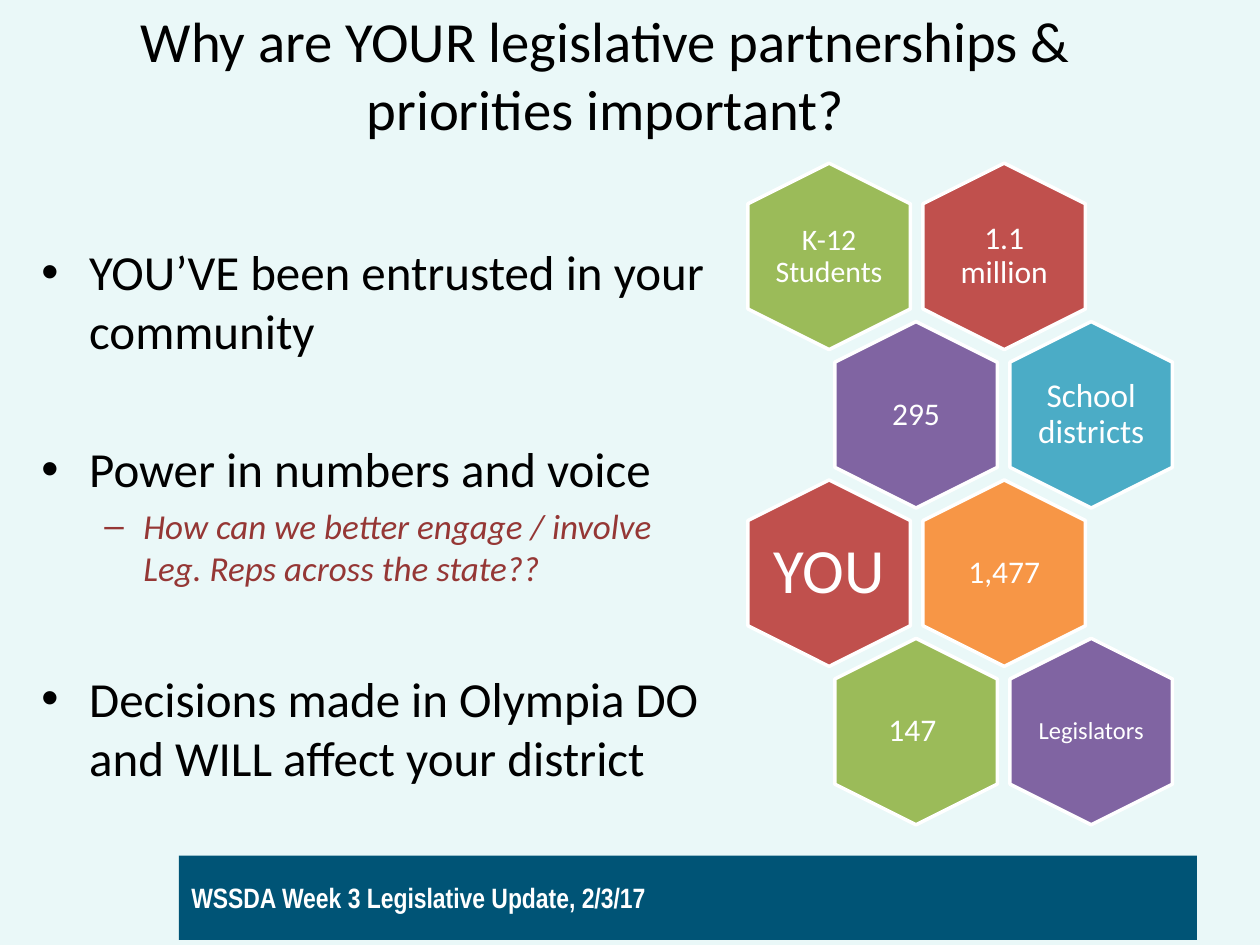
import pptx
import pptx.util
import pptx.dml.color
import pptx.enum.shapes
import pptx.enum.text
import lxml.etree
import pptx.oxml.ns

Inches = pptx.util.Inches
Pt = pptx.util.Pt
ALIGN = pptx.enum.text.PP_ALIGN
SHAPES = pptx.enum.shapes.MSO_SHAPE

COLORS = {
    "background": "EAF8F8", "footer": "005476", "black": "000000",
    "white": "FFFFFF", "dark red": "953735", "red": "C0504D",
    "green": "9BBB59", "purple": "8064A2", "blue": "4BACC6",
    "orange": "F79646",
}

# Honeycomb: rows of two cells, every second row shifted right
HEXAGON_LONG, HEXAGON_SHORT = 1.48, 1.29
GRID_LEFT, GRID_TOP = 5.84, 1.39
COLUMN_STEP, ROW_STEP, ROW_SHIFT = 1.39, 1.257, 0.69
LABEL_WIDTH, LABEL_HEIGHT = 0.89, 1.02
HONEYCOMB = [  # text, fill, size, inset
    [("K-12 Students", "green", 17, 0), ("1.1 million", "red", 18, 0.07)],
    [("295", "purple", 18, 0.07), ("School districts", "blue", 19, 0)],
    [("YOU", "red", 36, 0), ("1,477", "orange", 18, 0.07)],
    [("147 ", "green", 18, 0.07), ("Legislators", "purple", 14, 0)],
]

BULLETS = [  # text, level, space before in points
    ("YOU’VE been entrusted in your community", 0, 5.6),
    ("Power in numbers and voice", 0, 45.4),
    ("How can we better engage / involve Leg. Reps across the state??", 1, 4),
    ("Decisions made in Olympia DO and WILL affect your district", 0, 45.4),
]
LEVELS = [  # margin, indent, bullet, size, color, italic
    (0.38, -0.38, "•", 28, "black", False),
    (0.81, -0.31, "–", 20, "dark red", True),
]


def rgb(name):
    return pptx.dml.color.RGBColor.from_string(COLORS[name])


def format_paragraph(paragraph, size, color, font="Calibri", bold=False,
                     italic=False, align=ALIGN.LEFT):
    paragraph.alignment = align
    for run in paragraph.runs:
        run.font.name = font
        run.font.size = Pt(size)
        run.font.bold = bold
        run.font.italic = italic
        run.font.color.rgb = rgb(color)


def add_text_box(slide, left, top, width, height, middle=True):
    box = slide.shapes.add_textbox(Inches(left), Inches(top),
                                   Inches(width), Inches(height))
    box.text_frame.word_wrap = True
    if middle:
        box.text_frame.vertical_anchor = pptx.enum.text.MSO_ANCHOR.MIDDLE
    return box.text_frame


def add_filled_shape(slide, kind, left, top, width, height, color):
    shape = slide.shapes.add_shape(kind, Inches(left), Inches(top),
                                   Inches(width), Inches(height))
    shape.shadow.inherit = False
    shape.fill.solid()
    shape.fill.fore_color.rgb = rgb(color)
    shape.line.fill.background()
    return shape


def add_title(slide):
    frame = add_text_box(slide, 0.25, 0.25, 9.11, 0.67)
    frame.text = "Why are YOUR legislative partnerships & priorities important?"
    format_paragraph(frame.paragraphs[0], 32.4, "black", align=ALIGN.CENTER)


def add_footer(slide):
    bar = add_filled_shape(slide, SHAPES.RECTANGLE, 1.42, 6.79, 8.08, 0.67,
                           "footer")
    frame = bar.text_frame
    frame.text = "WSSDA Week 3 Legislative Update, 2/3/17"
    frame.vertical_anchor = pptx.enum.text.MSO_ANCHOR.MIDDLE
    format_paragraph(frame.paragraphs[0], 16, "white", "Arial Narrow", bold=True)


def add_bullets(slide):
    frame = add_text_box(slide, 0.23, 1.87, 5.51, 4.91, middle=False)
    frame.text = "\n".join(text for text, _, _ in BULLETS)
    for paragraph, (_, level, space) in zip(frame.paragraphs, BULLETS):
        margin, indent, bullet, size, color, italic = LEVELS[level]
        paragraph.level = level
        paragraph.space_before = Pt(space)
        format_paragraph(paragraph, size, color, italic=italic)
        properties = paragraph._p.get_or_add_pPr()
        properties.set("marL", str(Inches(margin)))
        properties.set("indent", str(Inches(indent)))
        for tag, key, value in (("a:buFont", "typeface", "Arial"),
                                ("a:buChar", "char", bullet)):
            lxml.etree.SubElement(properties,
                                  pptx.oxml.ns.qn(tag)).set(key, value)


def add_hexagon(slide, left, top, text, color, size, inset):
    hexagon = add_filled_shape(slide, SHAPES.HEXAGON, left, top,
                               HEXAGON_LONG, HEXAGON_SHORT, color)
    hexagon.rotation = 90
    hexagon.adjustments[0] = 0.25
    hexagon.adjustments[1] = 1.1547
    hexagon.line.color.rgb = rgb("white")
    hexagon.line.width = Pt(2)

    # The label stays upright, centred on the turned hexagon
    frame = add_text_box(slide, left + (HEXAGON_LONG - LABEL_WIDTH) / 2,
                         top + (HEXAGON_SHORT - LABEL_HEIGHT) / 2,
                         LABEL_WIDTH, LABEL_HEIGHT)
    frame.margin_left = frame.margin_right = Inches(inset)
    frame.margin_top = frame.margin_bottom = Inches(inset)
    frame.text = text
    frame.paragraphs[0].line_spacing = 0.9
    format_paragraph(frame.paragraphs[0], size, "white", align=ALIGN.CENTER)


def add_honeycomb(slide):
    for row, cells in enumerate(HONEYCOMB):
        for column, cell in enumerate(cells):
            left = GRID_LEFT + column * COLUMN_STEP + row % 2 * ROW_SHIFT
            add_hexagon(slide, left, GRID_TOP + row * ROW_STEP, *cell)


def main():
    presentation = pptx.Presentation()
    presentation.slide_width = Inches(10)
    presentation.slide_height = Inches(7.5)
    slide = presentation.slides.add_slide(presentation.slide_layouts[6])
    slide.background.fill.solid()
    slide.background.fill.fore_color.rgb = rgb("background")

    add_footer(slide)
    add_title(slide)
    add_bullets(slide)
    add_honeycomb(slide)
    presentation.save("out.pptx")


if __name__ == "__main__":
    main()
